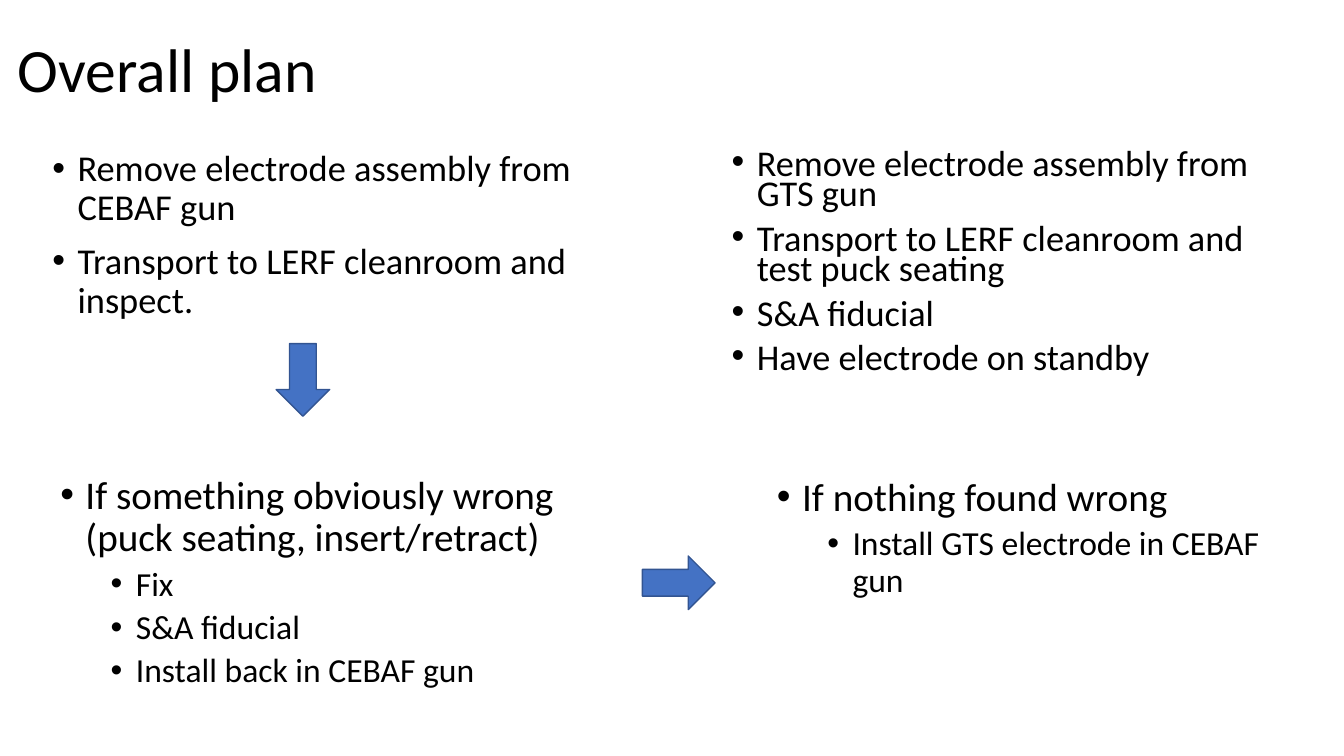
from dataclasses import dataclass

from lxml.etree import SubElement
from pptx import Presentation
from pptx.dml.color import RGBColor
from pptx.enum.shapes import MSO_SHAPE as Preset
from pptx.enum.text import MSO_ANCHOR as Anchor
from pptx.oxml.ns import qn
from pptx.slide import Slide
from pptx.util import Cm, Pt

BLACK = RGBColor(0x00, 0x00, 0x00)
ARROW_FILL = RGBColor(0x44, 0x72, 0xC4)
ARROW_LINE = RGBColor(0x32, 0x54, 0x91)
FONT = "Calibri"
INDENT, LEVEL_STEP = 0.635, 1.27  # cm
ARROW_SIZE = (1.35, 1.83)  # cm


@dataclass(frozen=True)
class Line:
    text: str
    size: float
    level: int = 0


@dataclass(frozen=True)
class Step:
    box: tuple[float, float, float, float]  # left, top, width, height in cm
    lines: list[Line]
    spacing: float = 0.9


@dataclass(frozen=True)
class Arrow:
    left: float
    top: float
    rotation: float = 0


STEPS = [
    # Electrode work on the two guns
    Step((1.07, 3.66, 13.77, 5.72), [
        Line("Remove electrode assembly from CEBAF gun", 26),
        Line("Transport to LERF cleanroom and inspect.", 26),
    ]),
    Step((18.19, 3.71, 14.55, 6.6), [
        Line("Remove electrode assembly from GTS gun", 25.9),
        Line("Transport to LERF cleanroom and test puck seating", 25.9),
        Line("S&A fiducial", 25.9),
        Line("Have electrode on standby", 25.9),
    ], spacing=0.7),
    # Two outcomes of the inspection
    Step((1.27, 11.86, 13.77, 5.72), [
        Line("If something obviously wrong (puck seating, insert/retract)", 28),
        Line("Fix", 24, 1),
        Line("S&A fiducial", 24, 1),
        Line("Install back in CEBAF gun", 24, 1),
    ]),
    Step((19.33, 11.91, 13.77, 5.72), [
        Line("If nothing found wrong", 28),
        Line("Install GTS electrode in CEBAF gun", 24, 1),
    ]),
]
ARROWS = [Arrow(6.96, 8.66), Arrow(16.43, 13.77, rotation=270)]


def add_bullet(paragraph, level: int) -> None:
    properties = paragraph._p.get_or_add_pPr()
    properties.set("marL", str(Cm(INDENT + level * LEVEL_STEP)))
    properties.set("indent", str(-Cm(INDENT)))
    SubElement(properties, qn("a:buFont")).set("typeface", "Arial")
    SubElement(properties, qn("a:buChar")).set("char", "•")


def add_text(slide: Slide, lines: list[Line], *, box: tuple[float, float, float, float],
             spacing: float = 0.9, bullets: bool = True, anchor: Anchor = Anchor.TOP) -> None:
    frame = slide.shapes.add_textbox(*map(Cm, box)).text_frame
    frame.word_wrap = True
    frame.vertical_anchor = anchor
    for index, line in enumerate(lines):
        paragraph = frame.add_paragraph() if index else frame.paragraphs[0]
        if bullets:
            paragraph.level = line.level
            add_bullet(paragraph, line.level)
        paragraph.line_spacing = spacing
        if index:
            paragraph.space_before = Pt(5 if line.level else 10)
        run = paragraph.add_run()
        run.text = line.text
        run.font.name = FONT
        run.font.size = Pt(line.size)
        run.font.color.rgb = BLACK


def add_arrow(slide: Slide, arrow: Arrow) -> None:
    shape = slide.shapes.add_shape(
        Preset.DOWN_ARROW, Cm(arrow.left), Cm(arrow.top), *map(Cm, ARROW_SIZE))
    shape.rotation = arrow.rotation
    shape.shadow.inherit = False
    shape.fill.solid()
    shape.fill.fore_color.rgb = ARROW_FILL
    shape.line.color.rgb = ARROW_LINE
    shape.line.width = Pt(1)


def main() -> None:
    deck = Presentation()
    deck.slide_width, deck.slide_height = Cm(33.87), Cm(19.05)
    slide = deck.slides.add_slide(deck.slide_layouts[6])

    # Title
    add_text(slide, [Line("Overall plan", 44)], box=(0.2, 0, 29.21, 3.68),
             bullets=False, anchor=Anchor.MIDDLE)

    # Plan steps and the flow between them
    for step in STEPS:
        add_text(slide, step.lines, box=step.box, spacing=step.spacing)
    for arrow in ARROWS:
        add_arrow(slide, arrow)

    deck.save("out.pptx")


if __name__ == "__main__":
    main()
